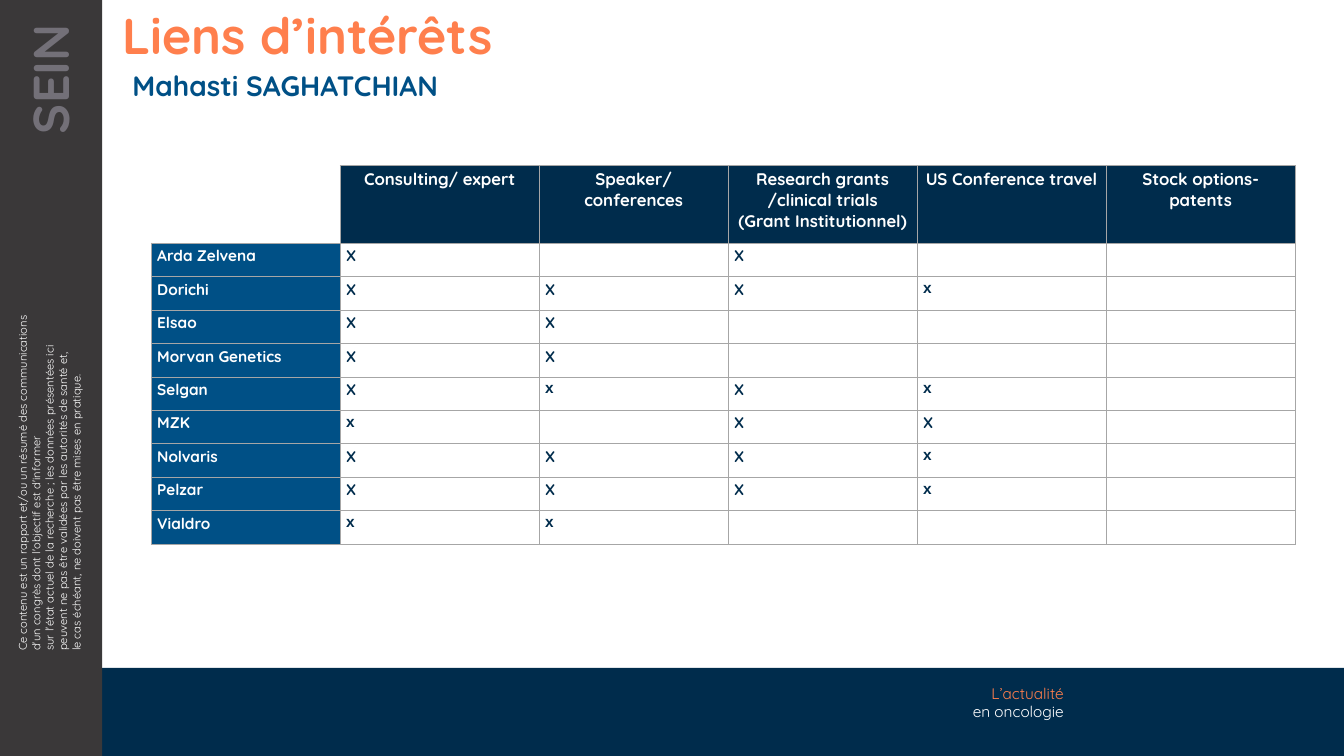
from lxml.etree import SubElement
from pptx import Presentation
from pptx.dml.color import RGBColor
from pptx.enum.shapes import MSO_SHAPE as SHAPE
from pptx.enum.text import PP_ALIGN as ALIGN
from pptx.oxml.ns import qn
from pptx.util import Pt

NAVY = RGBColor(0x00, 0x2C, 0x4C)
BLUE = RGBColor(0x00, 0x50, 0x86)
CHARCOAL = RGBColor(0x3A, 0x38, 0x39)
GREY = RGBColor(0x73, 0x70, 0x78)
BORDER = RGBColor(0xA6, 0xA6, 0xA6)
ORANGE = RGBColor(0xFF, 0x7F, 0x4D)
WHITE = RGBColor(0xFF, 0xFF, 0xFF)
FONT = "Quicksand"

DISCLAIMER = (
    "Ce contenu est un rapport et/ou un résumé des communications "
    "d'un congrès dont l'objectif est d'informer \v"
    "sur l'état actuel de la recherche ; les données présentées ici "
    "peuvent ne pas être validées par les autorités de santé et, \v"
    "le cas échéant, ne doivent pas être mises en pratique."
)
HEADERS = ["", "Consulting/ expert", "Speaker/ conferences",
           "Research grants /clinical trials\n(Grant Institutionnel)",
           "US Conference travel", "Stock options- patents"]
# One mark per column, "-" for an empty cell
LINKS = {
    "Arda Zelvena": "X-X--",
    "Dorichi": "XXXx-",
    "Elsao": "XX---",
    "Morvan Genetics": "XX---",
    "Selgan": "XxXx-",
    "MZK": "x-XX-",
    "Nolvaris": "XXXx-",
    "Pelzar": "XXXx-",
    "Vialdro": "xx---",
}


def style(p, size, color, bold=False, align=ALIGN.LEFT, name=FONT):
    p.alignment = align
    f = p.font
    f.name, f.size, f.bold = name, Pt(size), bold
    f.color.rgb = color


def add_bar(s, x, y, w, h, color):
    bar = s.shapes.add_shape(SHAPE.RECTANGLE, Pt(x), Pt(y), Pt(w), Pt(h))
    bar.shadow.inherit = False
    bar.fill.solid()
    bar.fill.fore_color.rgb = color
    bar.line.fill.background()


def add_text(s, x, y, w, h, text, size, color, bold=False, align=ALIGN.LEFT,
             left=7.2, right=7.2, rotation=0):
    sp = s.shapes.add_textbox(Pt(x), Pt(y), Pt(w), Pt(h))
    sp.rotation = rotation
    tf = sp.text_frame
    tf.word_wrap = True
    tf.margin_left, tf.margin_right = Pt(left), Pt(right)
    p = tf.paragraphs[0]
    p.text = text
    style(p, size, color, bold, align)
    return p


def add_upright_text(s, cx, cy, length, depth, *args, **kwargs):
    """Text that reads upwards, centred on cx, cy."""
    add_text(s, cx - length / 2, cy - depth / 2, length, depth, *args,
             rotation=270, **kwargs)


def add_sidebar(s, x, y, w, h):
    add_bar(s, x, y, w, h, CHARCOAL)
    add_upright_text(s, x + 35.4, y + 342.3, 259.2, 55.4, DISCLAIMER, 8, WHITE)
    add_upright_text(s, x + 35.6, y + 110.5, 221, 51, "SEIN", 36, GREY,
                     bold=True, align=ALIGN.RIGHT, right=17.3)


def add_footer(s, x, y, w, h):
    add_bar(s, x, y, w, h, NAVY)
    p = add_text(s, x + 576, y + 8, 118, 34, "L’actualité\v", 11, ORANGE,
                 align=ALIGN.RIGHT)
    r = p.add_run()
    r.text = "en oncologie"
    r.font.color.rgb = WHITE


def add_heading(s, x, y, w):
    add_text(s, x, y, w, 51, "Liens d’intérêts", 36, ORANGE, bold=True,
             left=14.4)
    p = add_text(s, x + 7.2, y + 49, w - 7.2, 39, "Mahasti SAGHATCHIAN", 20,
                 BLUE, bold=True, left=14.4)
    p.line_spacing = 0.9


def set_borders(cell, sides):
    tc_pr = cell._tc.get_or_add_tcPr()
    for i, side in enumerate(s for s in "LRTB" if s in sides):
        ln = SubElement(tc_pr, qn(f"a:ln{side}"), w=str(Pt(0.75)))
        fill = SubElement(ln, qn("a:solidFill"))
        SubElement(fill, qn("a:srgbClr"), val=str(BORDER))
        # Border lines come before the fill in a cell's properties
        tc_pr.insert(i, ln)


def fill_cell(cell, text, size, color, fill, align=ALIGN.LEFT, name=FONT):
    cell.margin_left = cell.margin_right = Pt(4.3)
    cell.margin_top = cell.margin_bottom = Pt(2.2)
    cell.fill.solid()
    cell.fill.fore_color.rgb = fill
    cell.text = text
    for p in cell.text_frame.paragraphs:
        style(p, size, color, True, align, name)
        if not text:
            # Keeps empty rows from growing to the default text size
            SubElement(p._p, qn("a:endParaRPr"), sz=str(size * 100))


def add_links_table(s, x, y, widths, head_h, row_h):
    n_rows = len(LINKS) + 1
    frame = s.shapes.add_table(n_rows, len(HEADERS), Pt(x), Pt(y),
                               Pt(sum(widths)),
                               Pt(head_h + row_h * len(LINKS)))
    table = frame.table
    for col, w in zip(table.columns, widths):
        col.width = Pt(w)
    for i, row in enumerate(table.rows):
        row.height = Pt(row_h if i else head_h)

    # Header row
    for j, text in enumerate(HEADERS):
        cell = table.cell(0, j)
        fill_cell(cell, text, 12, WHITE, NAVY if j else WHITE, ALIGN.CENTER)
        set_borders(cell, "LRTB" if j else "RB")

    # One row per company
    for i, (company, marks) in enumerate(LINKS.items(), 1):
        fill_cell(table.cell(i, 0), company, 11, WHITE, BLUE)
        set_borders(table.cell(i, 0), "LRTB")
        for j, mark in enumerate(marks, 1):
            fill_cell(table.cell(i, j), mark.strip("-"), 11, NAVY, WHITE,
                      name="Arial" if mark == "x" else FONT)
            set_borders(table.cell(i, j), "LRTB")


def main():
    prs = Presentation()
    prs.slide_width, prs.slide_height = Pt(960), Pt(540)
    s = prs.slides.add_slide(prs.slide_layouts[6])
    add_footer(s, 73, 477, 887, 63)
    add_sidebar(s, 0, 0, 73, 540)
    add_heading(s, 73, -0.7, 887)
    add_links_table(s, 108, 118.2, [135, 142.2] + [135] * 4, 55.5, 23.9)
    prs.save("out.pptx")


if __name__ == "__main__":
    main()
